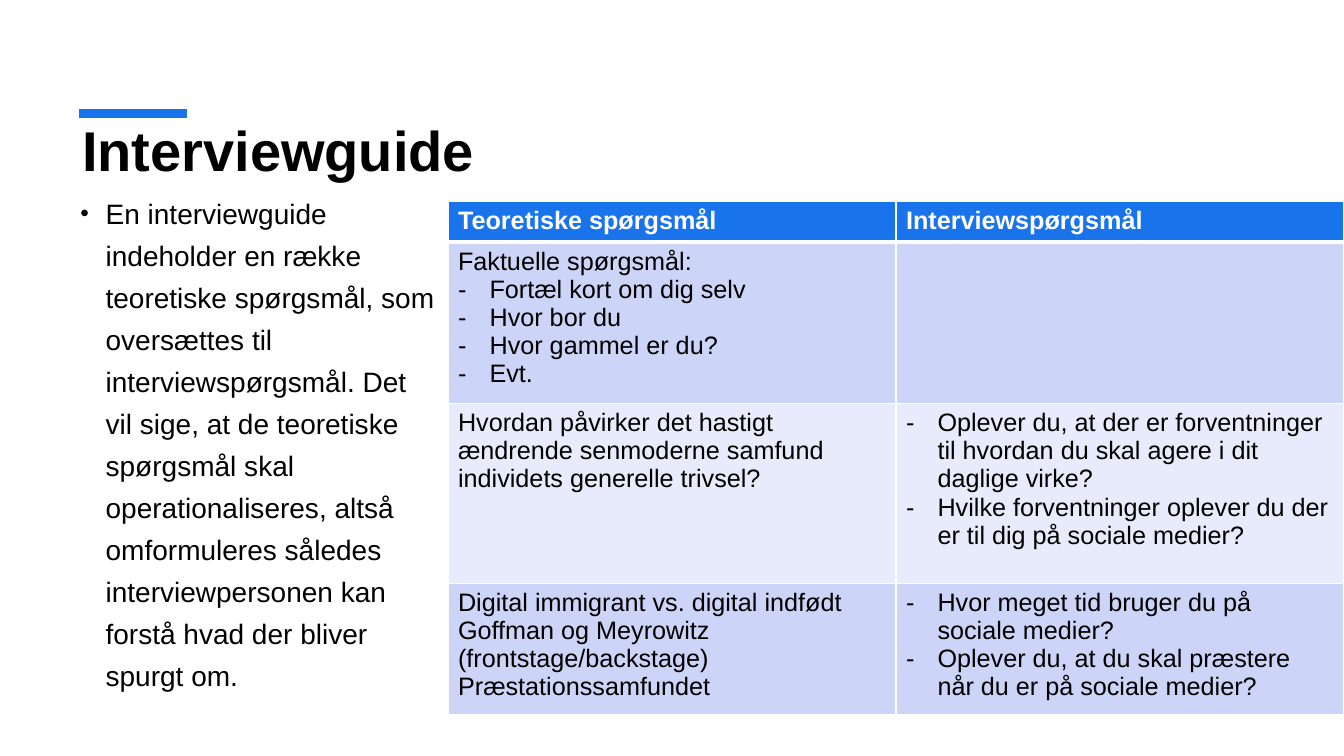
from lxml import etree
from pptx import Presentation
from pptx.dml.color import RGBColor
from pptx.enum.shapes import MSO_CONNECTOR
from pptx.enum.text import MSO_ANCHOR, MSO_AUTO_SIZE, PP_ALIGN
from pptx.oxml.ns import qn
from pptx.util import Pt

STRAIGHT = MSO_CONNECTOR.STRAIGHT
TOP = MSO_ANCHOR.TOP
NO_AUTOFIT = MSO_AUTO_SIZE.NONE
LEFT = PP_ALIGN.LEFT

BLACK = RGBColor(0x00, 0x00, 0x00)
WHITE = RGBColor(0xFF, 0xFF, 0xFF)
BLUE = RGBColor(0x19, 0x73, 0xEB)
BAND_DARK = RGBColor(0xCC, 0xD5, 0xF7)
BAND_LIGHT = RGBColor(0xE8, 0xEB, 0xFB)

TITLE_ONLY = 5
BODY_TEXT = (
    "En interviewguide indeholder en række teoretiske spørgsmål, som oversættes til "
    "interviewspørgsmål. Det vil sige, at de teoretiske spørgsmål skal operationaliseres, "
    "altså omformuleres således interviewpersonen kan forstå hvad der bliver spurgt om."
)

# Lines that start with "- " become dash bullets
TABLE_ROWS = [
    [["Teoretiske spørgsmål"], ["Interviewspørgsmål"]],
    [["Faktuelle spørgsmål:", "- Fortæl kort om dig selv", "- Hvor bor du",
      "- Hvor gammel er du?", "- Evt."], []],
    [["Hvordan påvirker det hastigt ændrende senmoderne samfund individets generelle trivsel?"],
     ["- Oplever du, at der er forventninger til hvordan du skal agere i dit daglige virke?",
      "- Hvilke forventninger oplever du der er til dig på sociale medier?"]],
    [["Digital immigrant vs. digital indfødt", "Goffman og Meyrowitz (frontstage/backstage)",
      "Præstationssamfundet"],
     ["- Hvor meget tid bruger du på sociale medier?",
      "- Oplever du, at du skal præstere når du er på sociale medier?"]],
]
ROW_HEIGHTS = [29, 108, 128.5, 87]
COLUMN_WIDTH = 320


class SlideBuilder:
    """Holds the text style and the slide being built."""

    font_name = "Arial"

    def __init__(self, slide):
        self.slide = slide

    def format_text(self, paragraph, size, color=BLACK, bold=False):
        paragraph.alignment = LEFT
        paragraph.font.color.rgb = color
        values = {"name": self.font_name, "size": Pt(size), "bold": bold}
        for name, value in values.items():
            setattr(paragraph.font, name, value)

    def add_bullet(self, paragraph, character, indent, percent=100):
        properties = paragraph._p.get_or_add_pPr()
        properties.set("marL", str(Pt(indent)))
        properties.set("indent", str(-Pt(indent)))
        etree.SubElement(properties, qn("a:buSzPct"), val=str(percent * 1000))
        etree.SubElement(properties, qn("a:buFont"), typeface=self.font_name)
        etree.SubElement(properties, qn("a:buChar"), char=character)

    def title(self, text, left, top, width, height):
        shape = self.slide.shapes.title
        position = {"left": left, "top": top, "width": width, "height": height}
        for name, value in position.items():
            setattr(shape, name, Pt(value))
        frame = shape.text_frame
        frame.text = text
        frame.auto_size = NO_AUTOFIT
        frame.vertical_anchor = TOP
        self.format_text(frame.paragraphs[0], 40, bold=True)

    def accent_line(self, left, right, y):
        line = self.slide.shapes.add_connector(STRAIGHT, Pt(left), Pt(y), Pt(right), Pt(y))
        line.line.color.rgb = BLUE
        line.line.width = Pt(6)
        etree.SubElement(line._element.spPr, qn("a:effectLst"))

    def bullet_text(self, text, left, top, width, height):
        box = self.slide.shapes.add_textbox(Pt(left), Pt(top), Pt(width), Pt(height))
        frame = box.text_frame
        frame.word_wrap = True
        paragraph = frame.paragraphs[0]
        paragraph.text = text
        paragraph.line_spacing = 1.25
        self.add_bullet(paragraph, "•", 18, 87)
        self.format_text(paragraph, 20)

    def cell_borders(self, cell, widths):
        properties = cell._tc.get_or_add_tcPr()
        for side, width in widths.items():
            line = etree.SubElement(properties, qn(f"a:ln{side}"), w=str(Pt(width)))
            fill = etree.SubElement(line, qn("a:solidFill"))
            etree.SubElement(fill, qn("a:srgbClr"), val=str(WHITE))

    def cell(self, cell, lines, row):
        header = row == 0
        self.cell_borders(cell, {"L": 1, "R": 1, "T": 3 if row == 1 else 1,
                                 "B": 3 if header else 1})
        cell.fill.solid()
        cell.fill.fore_color.rgb = BLUE if header else BAND_DARK if row % 2 else BAND_LIGHT
        frame = cell.text_frame
        for index, line in enumerate(lines):
            paragraph = frame.add_paragraph() if index else frame.paragraphs[0]
            paragraph.text = line.removeprefix("- ")
            if line.startswith("- "):
                self.add_bullet(paragraph, "-", 22.5)
            self.format_text(paragraph, 18, WHITE if header else BLACK, header)

    def table(self, rows, left, top):
        columns = len(rows[0])
        table = self.slide.shapes.add_table(
            len(rows), columns, Pt(left), Pt(top),
            Pt(columns * COLUMN_WIDTH), Pt(sum(ROW_HEIGHTS))).table
        for row, (height, texts) in enumerate(zip(ROW_HEIGHTS, rows)):
            table.rows[row].height = Pt(height)
            for column, lines in enumerate(texts):
                self.cell(table.cell(row, column), lines, row)


def main():
    presentation = Presentation()
    presentation.slide_width = Pt(960)
    presentation.slide_height = Pt(540)
    slide = presentation.slides.add_slide(presentation.slide_layouts[TITLE_ONLY])
    builder = SlideBuilder(slide)

    # Heading
    builder.accent_line(56.4, 133.4, 81)
    builder.title("Interviewguide", 51.6, 79.2, 857.5, 86.4)

    # Explanation and question table
    builder.bullet_text(BODY_TEXT, 50.4, 131, 269.3, 357)
    builder.table(TABLE_ROWS, 320, 144)

    presentation.save("out.pptx")


if __name__ == "__main__":
    main()
